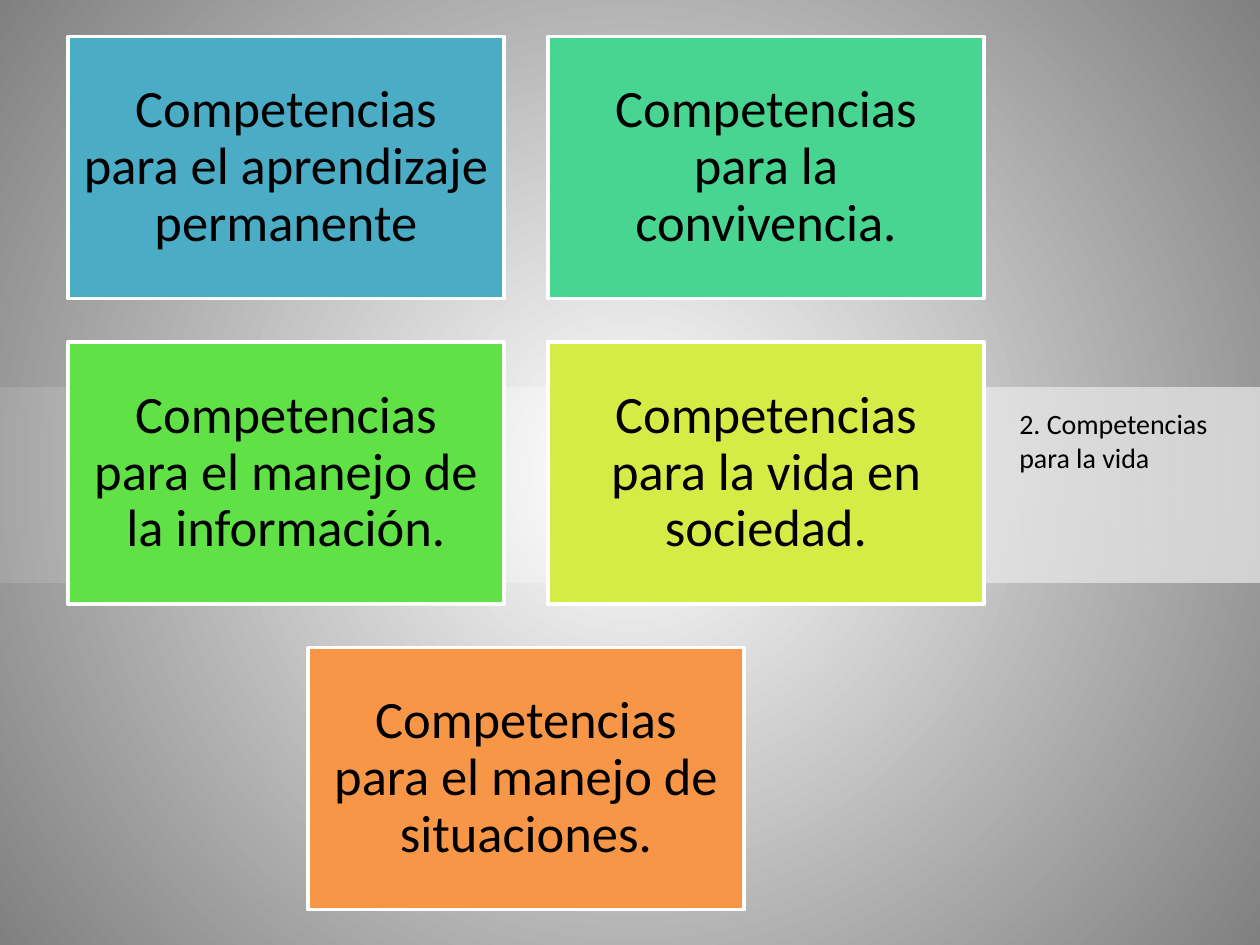
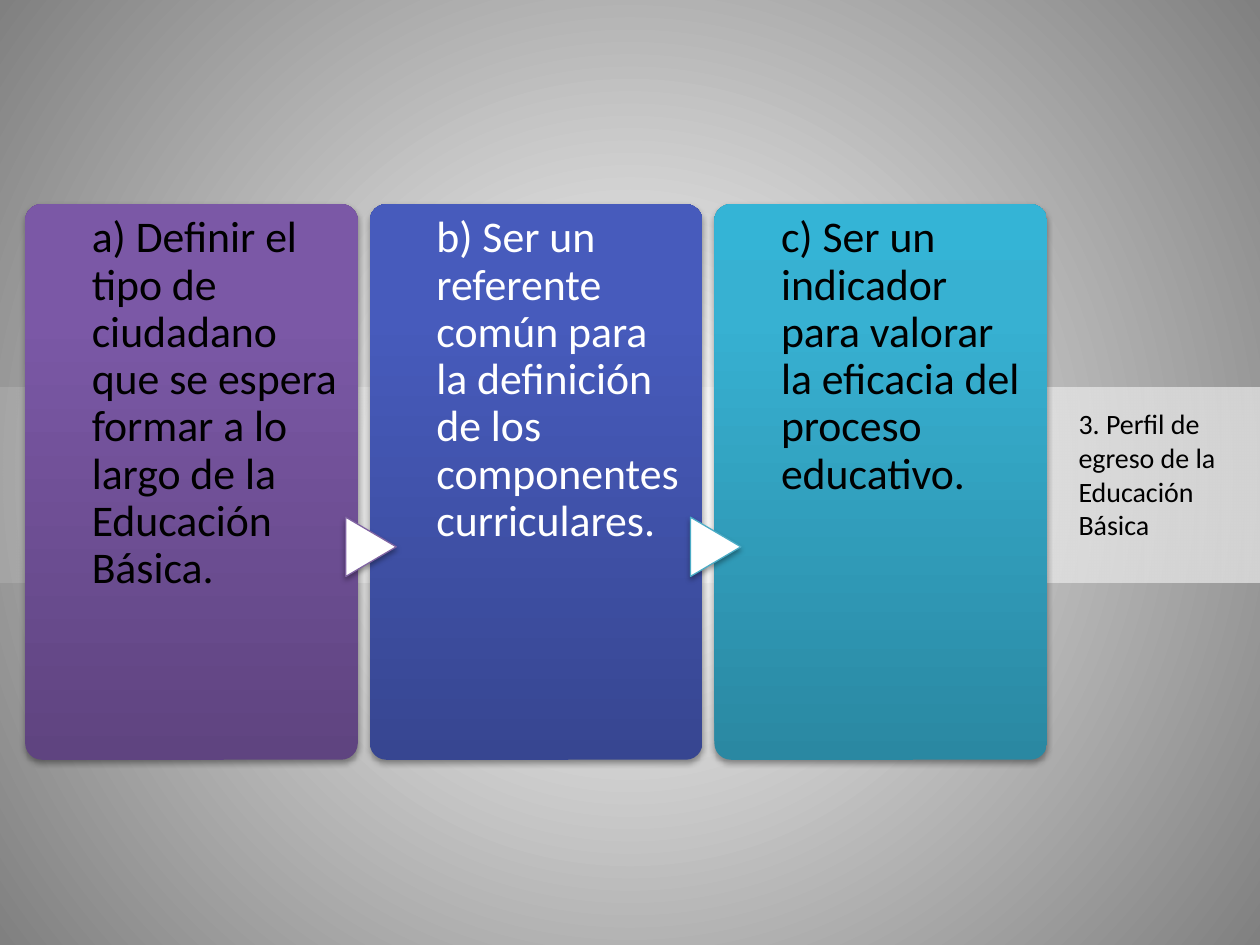
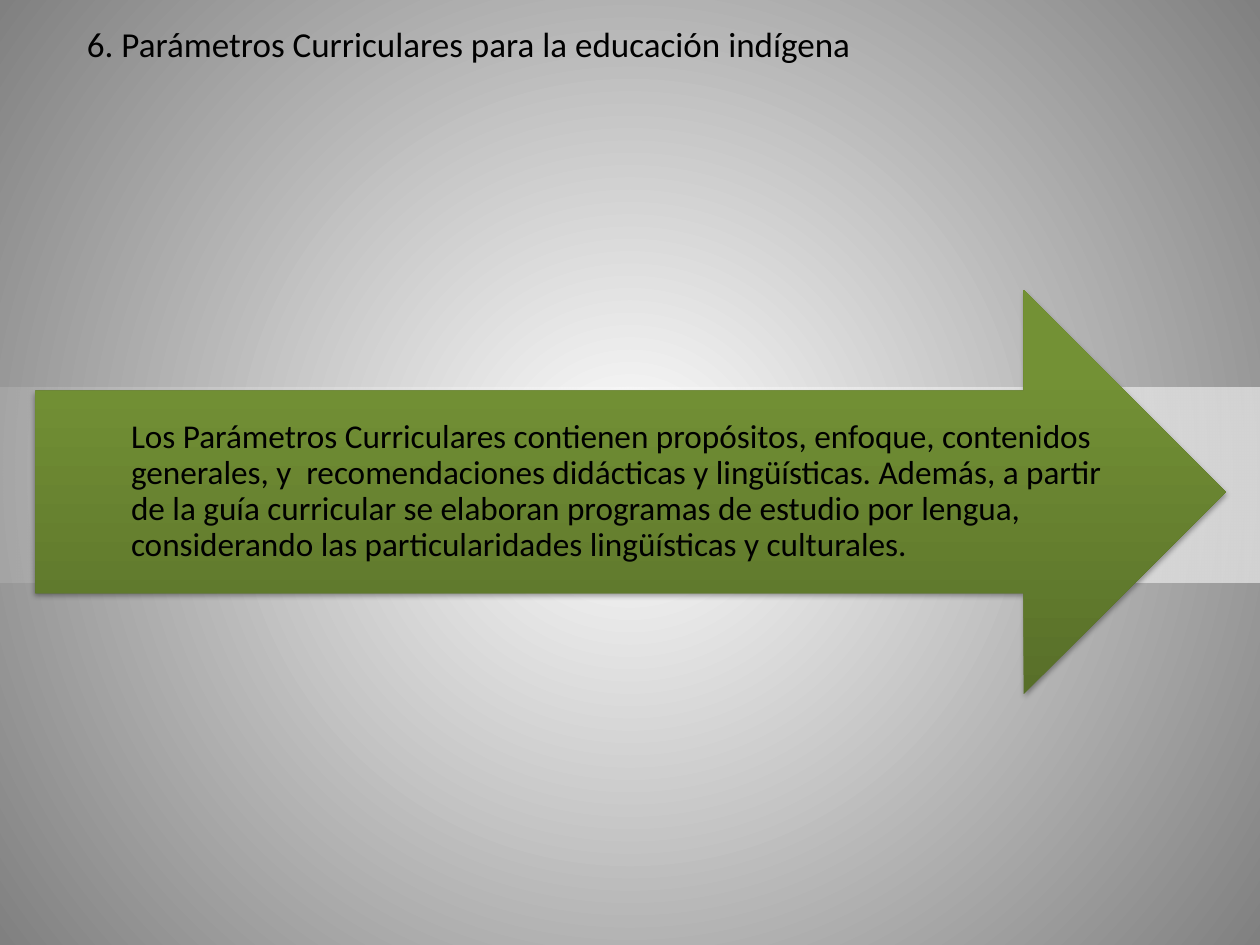
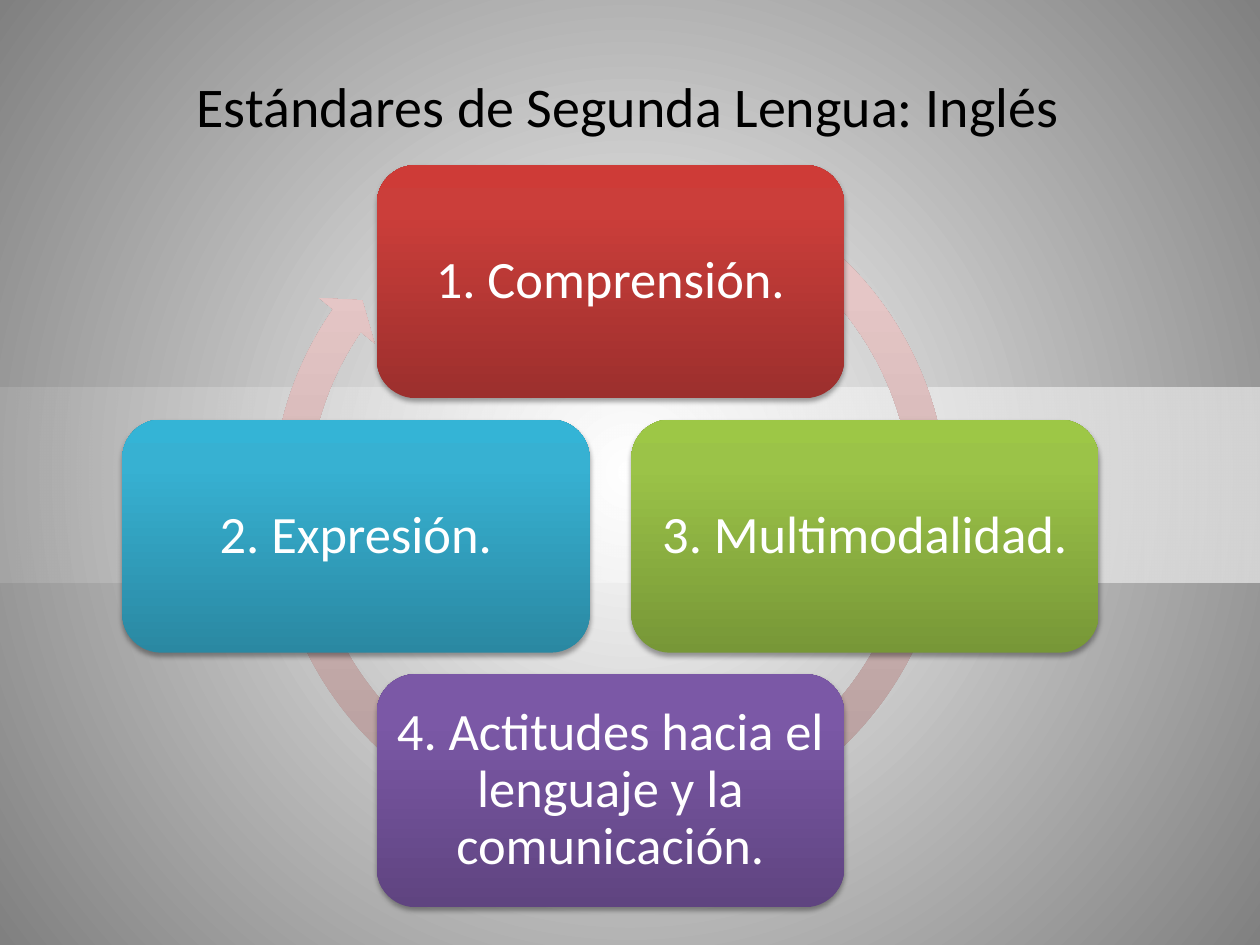
from lxml import etree
from pptx import Presentation
from pptx.dml.color import RGBColor
from pptx.enum.shapes import MSO_SHAPE
from pptx.enum.text import MSO_ANCHOR, MSO_AUTO_SIZE, PP_ALIGN
from pptx.oxml.ns import qn
from pptx.util import Inches, Pt

RECT = MSO_SHAPE.RECTANGLE
ROUNDED = MSO_SHAPE.ROUNDED_RECTANGLE
TRIANGLE = MSO_SHAPE.FLOWCHART_EXTRACT
RIGHT_ARROW = MSO_SHAPE.RIGHT_ARROW
CIRCULAR_ARROW = MSO_SHAPE.CIRCULAR_ARROW
TOP, MIDDLE = MSO_ANCHOR.TOP, MSO_ANCHOR.MIDDLE
LEFT, CENTER = PP_ALIGN.LEFT, PP_ALIGN.CENTER
FIT_SHAPE = MSO_AUTO_SIZE.SHAPE_TO_FIT_TEXT
TITLE_ONLY = 5
FONT = "Calibri"
UPWARD = 270

COLORS = {
    "black": "000000",
    "white": "FFFFFF",
    "gray": "808080",
    "teal": "4BACC6",
    "mint": "48D491",
    "green": "60E146",
    "lime": "D5EC46",
    "orange": "F79646",
    "purple": "8064A2",
}
GRADIENTS = {
    "purple": ("5F4480", "7B58A6", "7C57A8"),
    "blue": ("374691", "475BBC", "455ABF"),
    "teal": ("2A88A2", "37B1D2", "34B4D6"),
    "olive": ("586F29", "739135", "749334"),
    "red": ("9C2F2D", "CB3E3A", "CE3B37"),
    "green": ("779737", "9BC348", "9DC746"),
    "pink": ("B09998", "E5C6C6", "E6C7C6"),
}


def rgb(name):
    """Return the palette colour called name."""
    return RGBColor.from_string(COLORS[name])


def sub(parent, tag, **attrs):
    """Append a child element with the given attributes."""
    return etree.SubElement(parent, qn(tag), {k: str(v) for k, v in attrs.items()})


def set_gradient(owner, fill, stops, angle=None):
    """Fill with (percent, hex, alpha) stops, radial when there is no angle."""
    fill.solid()
    solid = owner.element.find(".//" + qn("a:solidFill"))
    grad = etree.Element(qn("a:gradFill"), rotWithShape="1")
    stop_list = sub(grad, "a:gsLst")
    for position, color, alpha in stops:
        stop = sub(stop_list, "a:gs", pos=position * 1000)
        sub(sub(stop, "a:srgbClr", val=color), "a:alpha", val=alpha * 1000)
    if angle is None:
        sub(sub(grad, "a:path", path="circle"), "a:fillToRect",
            l=50000, t=50000, r=50000, b=50000)
    else:
        sub(grad, "a:lin", ang=angle * 60000, scaled=0)
    solid.getparent().replace(solid, grad)


def add_shape(s, kind, x, y, w, h, line=None, width=0.75):
    """Add a preset shape without shadow and with an optional outline."""
    sp = s.shapes.add_shape(kind, Inches(x), Inches(y), Inches(w), Inches(h))
    if line:
        sp.line.color.rgb = rgb(line)
        sp.line.width = Pt(width)
    else:
        sp.line.fill.background()
    sp.shadow.inherit = False
    return sp


def add_shadow(sp):
    """Give a shape the soft shadow below it."""
    effects = sp.element.spPr.find(qn("a:effectLst"))
    shadow = sub(effects, "a:outerShdw", blurRad=Pt(3.1), dist=Pt(1.8),
                 dir=90 * 60000, rotWithShape=0)
    sub(sub(shadow, "a:srgbClr", val=COLORS["black"]), "a:alpha", val=35000)


def add_glossy(s, kind, x, y, w, h, gradient):
    """Add a shape with one of the three-stop vertical gradients."""
    sp = add_shape(s, kind, x, y, w, h)
    stops = [(pos, color, 100) for pos, color in zip((0, 80, 100), GRADIENTS[gradient])]
    set_gradient(sp, sp.fill, stops, UPWARD)
    return sp


def write(sp, text, size, color="black", align=CENTER, anchor=MIDDLE,
          insets=(0.12, 0.12, 0.12, 0.12), spacing=0.9):
    """Write one paragraph in a shape, with left, top, right, bottom insets."""
    tf = sp.text_frame
    tf.word_wrap = True
    tf.vertical_anchor = anchor
    tf.margin_left, tf.margin_top, tf.margin_right, tf.margin_bottom = map(Inches, insets)
    p = tf.paragraphs[0]
    p.text = text
    p.alignment = align
    p.line_spacing = spacing
    p.font.name = FONT
    p.font.size = Pt(size)
    p.font.color.rgb = rgb(color)


def add_slide(prs, title, x, y, w, h, size):
    """Add a slide with the shared background, band and title style."""
    s = prs.slides.add_slide(prs.slide_layouts[TITLE_ONLY])
    white = COLORS["white"]
    set_gradient(s, s.background.fill, [(0, white, 100), (100, COLORS["gray"], 100)])
    band = add_shape(s, RECT, 0, 3.08, 10, 1.54)
    set_gradient(band, band.fill, [(0, white, 12), (100, white, 57)], 0)
    sp = s.shapes.title
    sp.element.addprevious(band.element)
    sp.left, sp.top, sp.width, sp.height = map(Inches, (x, y, w, h))
    write(sp, title, size, align=LEFT, anchor=TOP, insets=(0.1, 0.05, 0.1, 0.05), spacing=1)
    sp.text_frame.auto_size = FIT_SHAPE
    return s


def build_life_skills(prs):
    """Build the grid of five competences, the last one centred."""
    s = add_slide(prs, "2. Competencias para la vida", 7.99, 3.18, 1.81, 0.64, 16)
    skills = [
        ("Competencias para el aprendizaje permanente", "teal"),
        ("Competencias para la convivencia.", "mint"),
        ("Competencias para el manejo de la información.", "green"),
        ("Competencias para la vida en sociedad.", "lime"),
        ("Competencias para el manejo de situaciones.", "orange"),
    ]
    for i, (text, color) in enumerate(skills):
        row, col = divmod(i, 2)
        if i == len(skills) - 1:
            col = 0.5
        sp = add_shape(s, RECT, 0.54 + col * 3.81, 0.29 + row * 2.425, 3.46, 2.08, "white", 2)
        sp.fill.solid()
        sp.fill.fore_color.rgb = rgb(color)
        write(sp, text, 30)


def build_graduate_profile(prs):
    """Build three cards joined by small triangles."""
    s = add_slide(prs, "3. Perfil de egreso de la Educación Básica", 8.46, 3.18, 1.34, 1.2, 16)
    step = 2.735
    cards = [
        ("a) Definir el tipo de ciudadano que se espera formar a lo largo "
         "de la Educación Básica.", "purple", "black"),
        ("b) Ser un referente común para la definición de los componentes "
         "curriculares.", "blue", "white"),
        ("c) Ser un indicador para valorar la eficacia del proceso educativo.",
         "teal", "black"),
    ]
    for i, (text, gradient, color) in enumerate(cards):
        sp = add_glossy(s, ROUNDED, 0.2 + i * step, 1.62, 2.64, 4.41, gradient)
        sp.adjustments[0] = 0.05
        add_shadow(sp)
        write(sp, text, 25, color, LEFT, TOP, (0.49, 0.05, 0.1, 0))
    for i, outline in enumerate(("purple", "teal")):
        sp = add_shape(s, TRIANGLE, 2.71 + i * step, 4.14, 0.47, 0.4, outline)
        sp.rotation = 90
        sp.fill.solid()
        sp.fill.fore_color.rgb = rgb("white")
        add_shadow(sp)


def build_indigenous_parameters(prs):
    """Build the wide arrow with its statement."""
    s = add_slide(prs, "6. Parámetros Curriculares para la educación indígena",
                  0.59, 0.13, 8.74, 0.44, 20)
    sp = add_glossy(s, RIGHT_ARROW, 0.28, 2.3, 9.45, 3.21, "olive")
    add_shadow(sp)
    write(sp, "Los Parámetros Curriculares contienen propósitos, enfoque, contenidos "
          "generales, y  recomendaciones didácticas y lingüísticas. Además, a partir de "
          "la guía curricular se elaboran programas de estudio por lengua, considerando "
          "las particularidades lingüísticas y culturales.",
          19, align=LEFT, insets=(0.76, 0.21, 0.15, 0.21))


def build_language_standards(prs):
    """Build the cycle of four standards around a circular arrow."""
    s = add_slide(prs, "Estándares de Segunda Lengua: Inglés", 1.46, 0.52, 7.12, 0.64, 32)
    ring = add_glossy(s, CIRCULAR_ARROW, 2.02, 1.17, 5.64, 5.64, "pink")
    for i, value in enumerate((0.05, 2.73, 128.83, 179.96, 0.05)):
        ring.adjustments[i] = value
    step = 2.02
    standards = [
        ("1. Comprensión.", "red", 0, -1),
        ("3. Multimodalidad.", "green", 1, 0),
        ("4. Actitudes hacia el lenguaje y la comunicación.", "purple", 0, 1),
        ("2. Expresión.", "teal", -1, 0),
    ]
    for text, gradient, dx, dy in standards:
        sp = add_glossy(s, ROUNDED, 2.99 + dx * step, 3.33 + dy * step, 3.71, 1.85, gradient)
        add_shadow(sp)
        write(sp, text, 30, "white", insets=(0.03, 0.03, 0.03, 0.03))


def main():
    """Build the four slides and save them."""
    prs = Presentation()
    prs.slide_width, prs.slide_height = Inches(10), Inches(7.5)
    build_life_skills(prs)
    build_graduate_profile(prs)
    build_indigenous_parameters(prs)
    build_language_standards(prs)
    prs.save("out.pptx")


if __name__ == "__main__":
    main()
